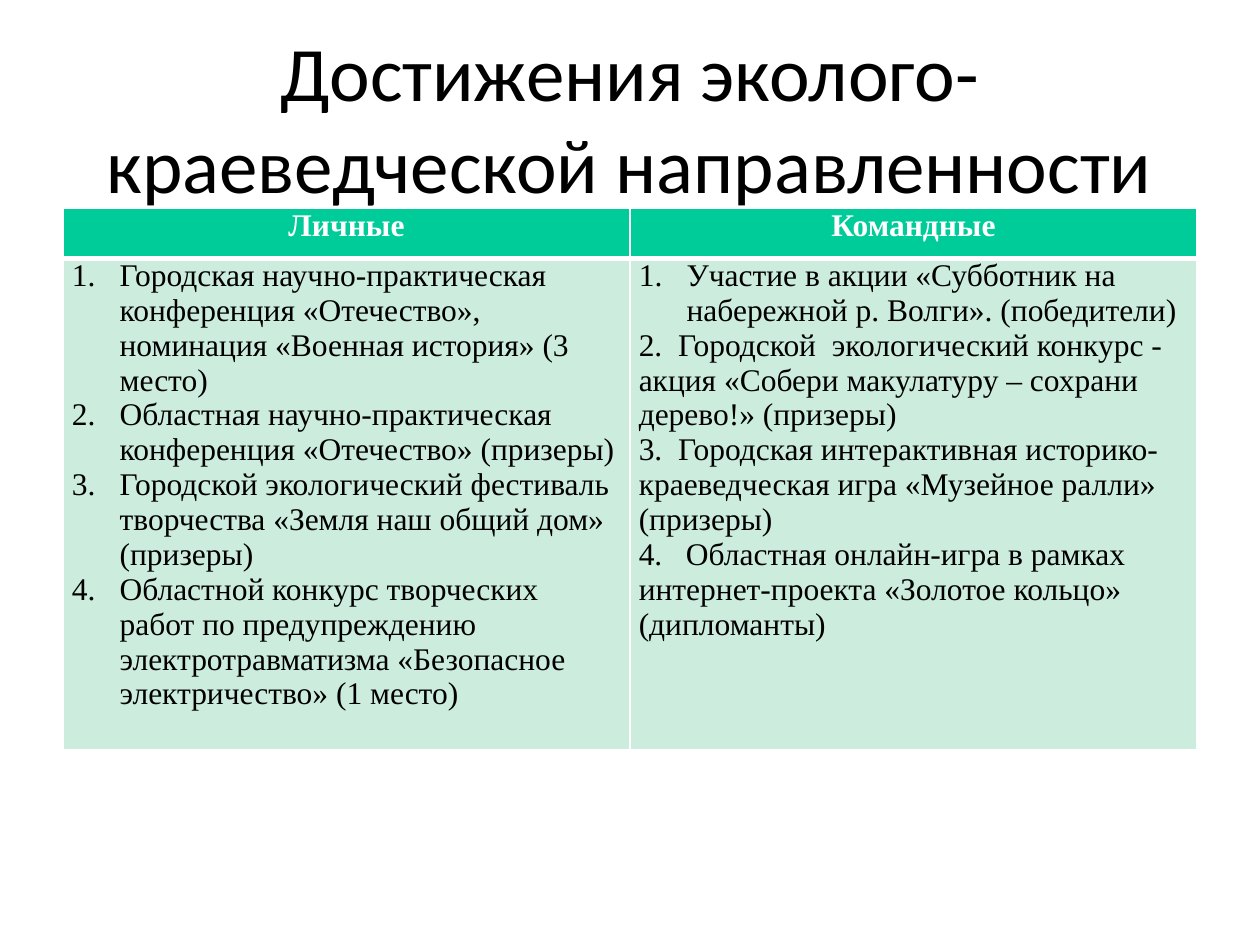
"""Build a slide with a two-column table of personal and team achievements."""
from lxml import etree
from pptx import Presentation
from pptx import util as u
from pptx.dml.color import RGBColor
from pptx.enum import text
from pptx.oxml import ns

THEME = {
    "header": "00CC99", "body": "CCECDE", "light": "FFFFFF", "dark": "000000",
    "title_font": "Calibri", "table_font": "Times New Roman",
    "title_size": 44, "table_size": 18,
}
ACHIEVEMENTS = {
    "Личные": [
        "Городская научно-практическая конференция «Отечество», номинация «Военная история» (3 место)",
        "Областная научно-практическая конференция «Отечество» (призеры)",
        "Городской экологический фестиваль творчества «Земля наш общий дом» (призеры)",
        "Областной конкурс творческих работ по предупреждению электротравматизма «Безопасное электричество» (1 место)",
    ],
    "Командные": [
        "Участие в акции «Субботник на набережной р. Волги». (победители)",
        "2.  Городской  экологический конкурс - акция «Собери макулатуру – сохрани дерево!» (призеры)",
        "3.  Городская интерактивная историко-краеведческая игра «Музейное ралли» (призеры)",
        "4.   Областная онлайн-игра в рамках интернет-проекта «Золотое кольцо» (дипломанты)",
    ],
}
NUMBERED = {"Личные": 4, "Командные": 1}


def style(paragraph, font, size, color, bold=False):
    for run in paragraph.runs:
        run.font.name, run.font.size, run.font.bold = font, u.Pt(size), bold
        run.font.color.rgb = RGBColor.from_string(color)


def prepare_cell(cell, fill, bottom_width):
    cell.margin_left = cell.margin_right = u.Inches(0.07)
    cell.margin_top = cell.margin_bottom = 0
    properties = cell._tc.get_or_add_tcPr()
    for side, width in {"lnL": 1, "lnR": 1, "lnT": 1, "lnB": bottom_width}.items():
        border = etree.SubElement(properties, ns.qn(f"a:{side}"), w=str(u.Pt(width)))
        solid = etree.SubElement(border, ns.qn("a:solidFill"))
        etree.SubElement(solid, ns.qn("a:srgbClr"), val=THEME["light"])
    cell.fill.solid()
    cell.fill.fore_color.rgb = RGBColor.from_string(fill)


deck = Presentation()
deck.slide_width, deck.slide_height = u.Inches(10), u.Inches(7.5)
slide = deck.slides.add_slide(deck.slide_layouts[6])
left, width = int(deck.slide_width * 0.05), int(deck.slide_width * 0.9)

heading = slide.shapes.add_textbox(left, u.Inches(0.14), width, u.Inches(1.57)).text_frame
heading.word_wrap = True
heading.vertical_anchor = text.MSO_ANCHOR.MIDDLE
heading.text = "Достижения эколого-краеведческой направленности"
heading.paragraphs[0].alignment = text.PP_ALIGN.CENTER
style(heading.paragraphs[0], THEME["title_font"], THEME["title_size"], THEME["dark"])

row_heights = [u.Inches(0.4), u.Inches(3.87)]
achievements = slide.shapes.add_table(
    2, len(ACHIEVEMENTS), left, u.Inches(1.65), width, sum(row_heights)).table
for row, height in zip(achievements.rows, row_heights):
    row.height = height

for column, (category, entries) in enumerate(ACHIEVEMENTS.items()):
    category_cell = achievements.cell(0, column)
    prepare_cell(category_cell, THEME["header"], 3)
    category_cell.text_frame.text = category
    category_line = category_cell.text_frame.paragraphs[0]
    category_line.alignment = text.PP_ALIGN.CENTER
    style(category_line, THEME["table_font"], THEME["table_size"], THEME["light"], True)

    entries_cell = achievements.cell(1, column)
    prepare_cell(entries_cell, THEME["body"], 1)
    entries_cell.text_frame.text = "\n".join(entries)
    for index, entry in enumerate(entries_cell.text_frame.paragraphs):
        style(entry, THEME["table_font"], THEME["table_size"], THEME["dark"])
        if index < NUMBERED[category]:
            numbering = entry._p.get_or_add_pPr()
            numbering.set("marL", str(u.Inches(0.38)))
            numbering.set("indent", str(-u.Inches(0.38)))
            etree.SubElement(numbering, ns.qn("a:buFont"), typeface="+mj-lt")
            etree.SubElement(numbering, ns.qn("a:buAutoNum"), type="arabicPeriod")

deck.save("out.pptx")
